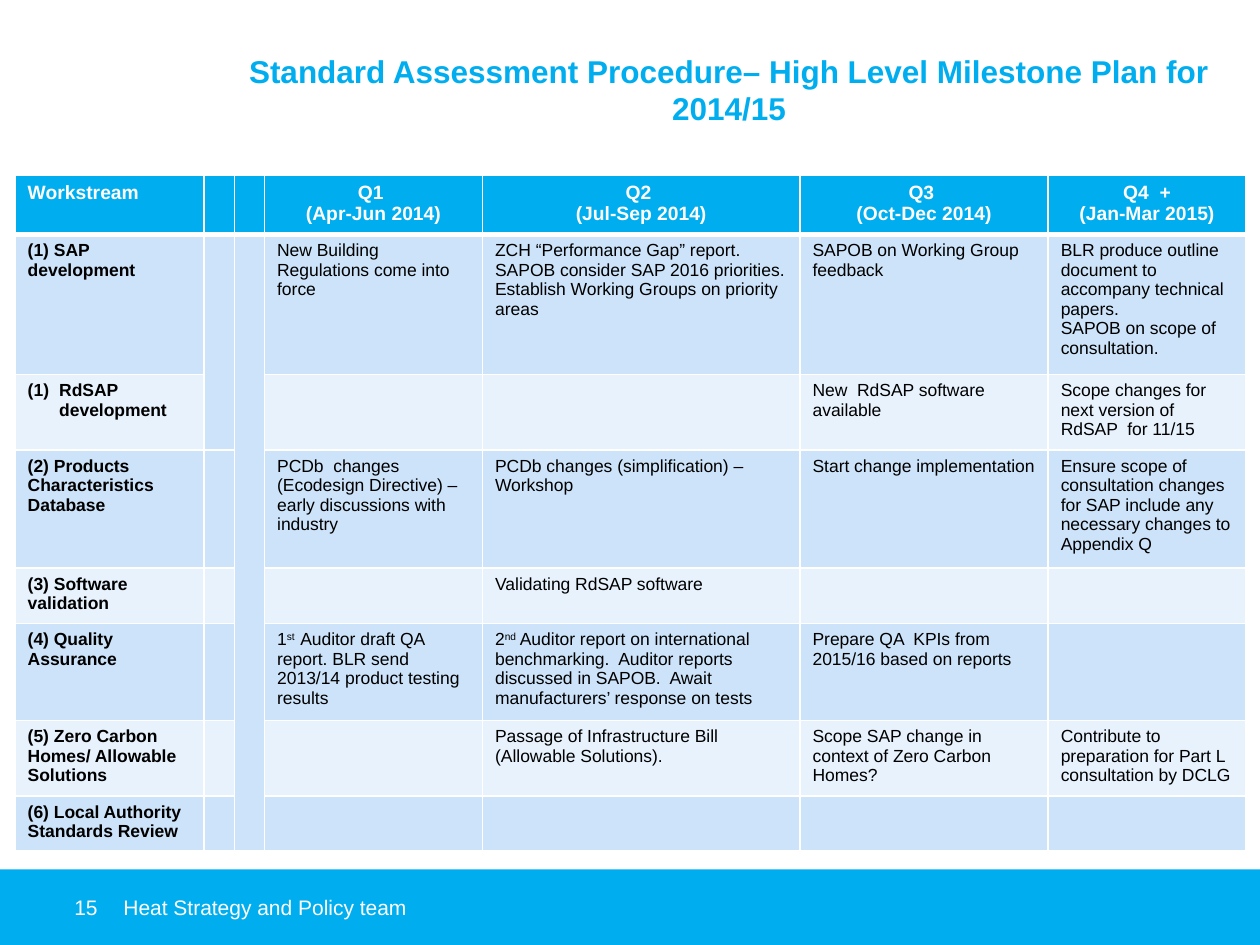
"""Build the quarterly milestone plan slide with its title, table and footer."""
from dataclasses import dataclass

from lxml.etree import SubElement
from pptx import Presentation
from pptx.dml.color import RGBColor
from pptx.enum.shapes import MSO_SHAPE as Shape
from pptx.enum.text import MSO_ANCHOR as Anchor, MSO_AUTO_SIZE as AutoSize, PP_ALIGN as Align
from pptx.oxml.ns import qn
from pptx.util import Inches, Pt

SLIDE_WIDTH, SLIDE_HEIGHT = Inches(10), Inches(7.5)
FONT = "Arial"
BLUE = RGBColor(0x00, 0xAE, 0xEF)
WHITE = RGBColor(0xFF, 0xFF, 0xFF)
BLACK = RGBColor(0x00, 0x00, 0x00)
BANDS = (RGBColor(0xE7, 0xF2, 0xFC), RGBColor(0xCC, 0xE3, 0xF9))

COLUMN_WIDTHS = (1.5, 0.24, 0.24, 1.73, 2.52, 1.97, 1.57)
FIRST_QUARTER_COLUMN = 3
SPACER_MERGES = (((1, 1), (2, 1)), ((1, 2), (7, 2)))
HEADER_HEIGHT = 0.45
HEADERS = ("Q1 \n(Apr-Jun 2014)", "Q2 \n(Jul-Sep 2014)",
           "Q3 \n(Oct-Dec 2014)", "Q4  +\n(Jan-Mar 2015)")


@dataclass(frozen=True)
class Box:
    """A rectangle given in shares of the slide's width and height."""
    left: float
    top: float
    width: float
    height: float

    def lengths(self) -> tuple:
        return (round(self.left * SLIDE_WIDTH), round(self.top * SLIDE_HEIGHT),
                round(self.width * SLIDE_WIDTH), round(self.height * SLIDE_HEIGHT))


@dataclass(frozen=True)
class TextStyle:
    """The look of a run of text."""
    size: float
    color: RGBColor
    bold: bool = False


@dataclass(frozen=True)
class Workstream:
    """A table row: its name, its height and its four quarters; ^ encloses superscripts."""
    name: str
    height: float
    quarters: tuple
    numbered: bool = False


TITLE_BOX = Box(0.169, 0.048, 0.819, 0.095)
TABLE_BOX = Box(0.012, 0.186, 0.977, 0.71)
FOOTER_BOX = Box(0, 0.92, 1, 0.08)
TEAM_BOX = Box(0.098, 0.92, 0.843, 0.08)

TITLE_STYLE = TextStyle(18, BLUE, True)
FOOTER_STYLE = TextStyle(12, WHITE)
HEADER_STYLE = TextStyle(11, WHITE, True)
NAME_STYLE = TextStyle(10, BLACK, True)
BODY_STYLE = TextStyle(10, BLACK)

WORKSTREAMS = (
    Workstream("(1) SAP development", 1.11, (
        "New Building Regulations come into force",
        "ZCH “Performance Gap” report.\nSAPOB consider SAP 2016 priorities. "
        "Establish Working Groups on priority areas",
        "SAPOB on Working Group feedback",
        "BLR produce outline document to accompany technical papers.\n"
        "SAPOB on scope of consultation.")),
    Workstream("RdSAP development", 0.6, (
        "", "", "New  RdSAP software available",
        "Scope changes for next version of RdSAP  for 11/15"), numbered=True),
    Workstream("(2) Products Characteristics Database", 0.93, (
        "PCDb  changes (Ecodesign Directive) – early discussions with industry",
        "PCDb changes (simplification) – Workshop",
        "Start change implementation",
        "Ensure scope of consultation changes for SAP include any necessary "
        "changes to Appendix Q")),
    Workstream("(3) Software validation", 0.44, ("", "Validating RdSAP software", "", "")),
    Workstream("(4) Quality Assurance", 0.77, (
        "1^st  ^Auditor draft QA report. BLR send 2013/14 product testing results",
        "2^nd^ Auditor report on international benchmarking.  Auditor reports "
        "discussed in SAPOB.  Await manufacturers’ response on tests",
        "Prepare QA  KPIs from 2015/16 based on reports", "")),
    Workstream("(5) Zero Carbon Homes/ Allowable Solutions", 0.6, (
        "", "Passage of Infrastructure Bill (Allowable Solutions).",
        "Scope SAP change in context of Zero Carbon Homes?",
        "Contribute to preparation for Part L consultation by DCLG")),
    Workstream("(6) Local Authority Standards Review", 0.43, ("",) * 4),
)


def write_text(text_frame, text: str, style: TextStyle, align=Align.LEFT) -> None:
    """Fill a text frame, one paragraph per line."""
    for index, line in enumerate(text.split("\n")):
        paragraph = text_frame.add_paragraph() if index else text_frame.paragraphs[0]
        paragraph.alignment = align
        for position, part in enumerate(line.split("^")):
            run = paragraph.add_run()
            run.text = part
            run.font.name, run.font.size = FONT, Pt(style.size)
            run.font.bold, run.font.color.rgb = style.bold, style.color
            if position % 2:
                run._r.get_or_add_rPr().set("baseline", "30000")


def set_indent(paragraph, margin: float, first_line: float = 0) -> None:
    """Set the left margin and first-line indent in inches."""
    properties = paragraph._p.get_or_add_pPr()
    properties.set("marL", str(Inches(margin)))
    properties.set("indent", str(Inches(first_line)))


def add_number(paragraph) -> None:
    """Number a paragraph as (1) with a hanging indent."""
    set_indent(paragraph, 0.25, -0.25)
    SubElement(paragraph._p.get_or_add_pPr(), qn("a:buAutoNum"), type="arabicParenBoth")


def set_borders(cell, top: float, bottom: float) -> None:
    """Give a cell white borders, with the horizontal widths in points."""
    properties = cell._tc.get_or_add_tcPr()
    for side, width in (("L", 1), ("R", 1), ("T", top), ("B", bottom)):
        line = SubElement(properties, qn(f"a:ln{side}"), w=str(Pt(width)))
        fill = SubElement(line, qn("a:solidFill"))
        SubElement(fill, qn("a:srgbClr"), val=str(WHITE))


def paint_cells(table) -> None:
    """Apply the borders and the banded fills."""
    for row_index, row in enumerate(table.rows):
        for column_index, cell in enumerate(row.cells):
            set_borders(cell, 3 if row_index == 1 else 1, 1 if row_index else 3)
            cell.fill.solid()
            band = 1 if column_index == 2 else row_index % 2
            cell.fill.fore_color.rgb = BANDS[band] if row_index else BLUE


def add_milestone_table(slide) -> None:
    """Add the table of workstreams by quarter."""
    table = slide.shapes.add_table(
        len(WORKSTREAMS) + 1, len(COLUMN_WIDTHS), *TABLE_BOX.lengths()).table
    table.horz_banding = False
    for column, width in zip(table.columns, COLUMN_WIDTHS):
        column.width = Inches(width)
    heights = (HEADER_HEIGHT, *(workstream.height for workstream in WORKSTREAMS))
    for row, height in zip(table.rows, heights):
        row.height = Inches(height)
    paint_cells(table)
    write_text(table.cell(0, 0).text_frame, "Workstream", HEADER_STYLE)
    for column, header in enumerate(HEADERS, FIRST_QUARTER_COLUMN):
        write_text(table.cell(0, column).text_frame, header, HEADER_STYLE, Align.CENTER)
    for row, workstream in enumerate(WORKSTREAMS, 1):
        name_frame = table.cell(row, 0).text_frame
        if workstream.numbered:
            add_number(name_frame.paragraphs[0])
        write_text(name_frame, workstream.name, NAME_STYLE)
        for column, milestone in enumerate(workstream.quarters, FIRST_QUARTER_COLUMN):
            if milestone:
                write_text(table.cell(row, column).text_frame, milestone, BODY_STYLE)
    for first, last in SPACER_MERGES:
        table.cell(*first).merge(table.cell(*last))


def add_footer(slide) -> None:
    """Add the footer band with the page number and the team name."""
    band = slide.shapes.add_shape(Shape.RECTANGLE, *FOOTER_BOX.lengths())
    band.shadow.inherit = False
    band.fill.solid()
    band.fill.fore_color.rgb = BLUE
    band.line.fill.background()
    set_indent(band.text_frame.paragraphs[0], 0.59)
    team = slide.shapes.add_textbox(*TEAM_BOX.lengths())
    for shape, text in ((band, "15"), (team, "Heat Strategy and Policy team")):
        frame = shape.text_frame
        frame.word_wrap, frame.vertical_anchor = True, Anchor.MIDDLE
        frame.margin_left = frame.margin_right = frame.margin_top = frame.margin_bottom = 0
        write_text(frame, text, FOOTER_STYLE)


def add_title(slide) -> None:
    """Place and format the title placeholder."""
    title = slide.shapes.title
    title.left, title.top, title.width, title.height = TITLE_BOX.lengths()
    frame = title.text_frame
    frame.auto_size, frame.vertical_anchor = AutoSize.NONE, Anchor.TOP
    write_text(frame, "Standard Assessment Procedure– High Level Milestone Plan for 2014/15",
               TITLE_STYLE, Align.CENTER)


def main() -> None:
    """Build and save the presentation."""
    presentation = Presentation()
    presentation.slide_width, presentation.slide_height = SLIDE_WIDTH, SLIDE_HEIGHT
    slide = presentation.slides.add_slide(presentation.slide_layouts[5])
    add_footer(slide)
    add_title(slide)
    add_milestone_table(slide)
    presentation.save("out.pptx")


if __name__ == "__main__":
    main()
